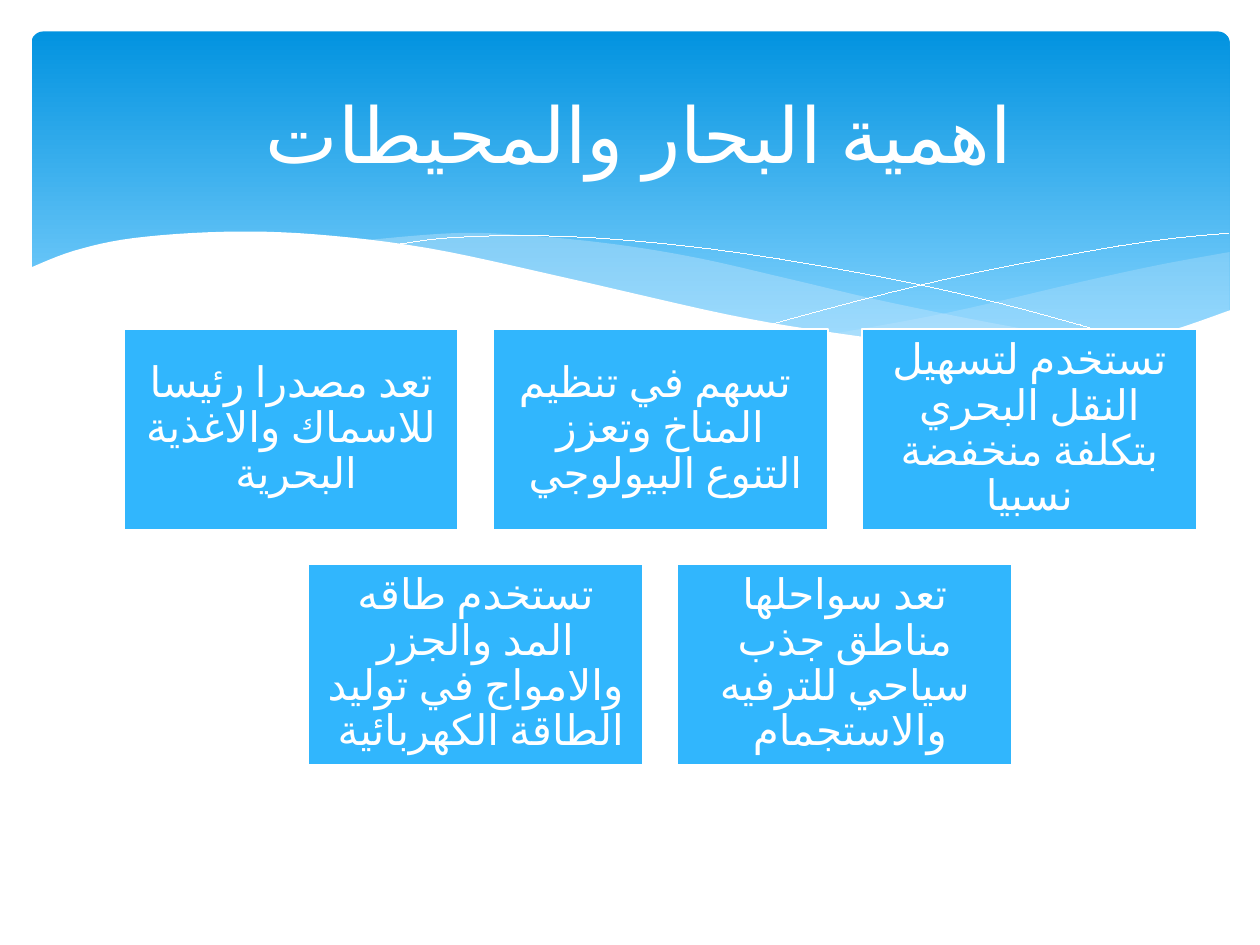
from dataclasses import dataclass

from lxml.etree import SubElement
from pptx import Presentation
from pptx.dml.color import RGBColor
from pptx.enum.shapes import MSO_SHAPE as Shape
from pptx.enum.text import MSO_ANCHOR as Anchor, PP_ALIGN as Align
from pptx.oxml.ns import qn
from pptx.util import Inches, Pt


@dataclass(frozen=True)
class Theme:
    font: str = "Calibri"
    language: str = "ar-SA"
    title_size: int = 44
    card_size: int = 24
    hairline: float = 0.01
    white: str = "FFFFFF"
    card: str = "31B6FD"
    wave: str = "C6E7FC"
    sky_top: str = "0293E0"
    sky_bottom: str = "83D3FE"


@dataclass(frozen=True)
class Box:
    left: float
    top: float
    width: float
    height: float

    def emu(self):
        return [Inches(v) for v in (self.left, self.top, self.width, self.height)]


THEME = Theme()
TITLE = "اهمية البحار والمحيطات "
CARD_ROWS = [
    [
        "تعد مصدرا رئيسا للاسماك والاغذية البحرية ",
        " تسهم في تنظيم المناخ وتعزز التنوع البيولوجي ",
        "تستخدم لتسهيل النقل البحري بتكلفة منخفضة نسبيا",
    ],
    [
        "تستخدم طاقه المد والجزر والامواج في توليد الطاقة الكهربائية ",
        "تعد سواحلها مناطق جذب سياحي للترفيه والاستجمام ",
    ],
]

RIGHT_WAVE = [
    [(9.51, 1.75), (8.96, 1.85), (8.36, 1.98), (7.28, 2.23), (6.36, 2.4)],
    [(6.36, 2.4), (6.94, 2.47), (7.78, 2.53), (8.56, 2.48), (9.1, 2.37), (9.51, 2.22)],
]
MIDDLE_WAVE = [
    [(8.68, 2.48), (7.82, 2.35), (6.81, 2.15), (6.04, 1.97), (5.3, 1.8),
     (4.64, 1.69), (3.95, 1.62), (3.36, 1.6), (2.61, 1.66)],
    [(2.61, 1.66), (3.37, 1.78), (4.24, 1.97), (5.41, 2.23), (6.4, 2.41),
     (7.23, 2.51), (7.93, 2.53), (8.68, 2.48)],
]
FALLING_LINE = [
    [(2.84, 1.7), (3.28, 1.64), (3.91, 1.62), (4.64, 1.65), (5.57, 1.75),
     (6.7, 1.94), (7.7, 2.16), (8.82, 2.47)],
]
RISING_LINE = [
    [(5.88, 2.32), (6.7, 2.1), (7.51, 1.91), (8.41, 1.74), (8.99, 1.65), (9.5, 1.6)],
]
FRONT_WAVE = [
    [(9.52, 2.21), (8.95, 2.4), (8.38, 2.49), (7.84, 2.52), (7.19, 2.49),
     (6.43, 2.4), (5.54, 2.25), (4.22, 1.95), (3.15, 1.72), (2.25, 1.61),
     (1.52, 1.59), (0.81, 1.64), (0.34, 1.74), (-0.02, 1.88)],
    [(-0.02, 3.04), (9.52, 3.04)],
]


def smooth(knots, steps=6):
    padded = [knots[0], *knots, knots[-1]]
    points = [knots[0]]
    for a, b, c, d in zip(padded, padded[1:], padded[2:], padded[3:]):
        for step in range(1, steps + 1):
            t = step / steps
            points.append(tuple(
                0.5 * (2 * q + (r - p) * t + (2 * p - 5 * q + 4 * r - s) * t**2
                       + (3 * q - p - 3 * r + s) * t**3)
                for p, q, r, s in zip(a, b, c, d)
            ))
    return points


def paint(shape, fill=None, line=None, weight=THEME.hairline, opacity=None):
    shape.shadow.inherit = False
    if fill:
        shape.fill.solid()
        shape.fill.fore_color.rgb = RGBColor.from_string(fill)
        if opacity is not None:
            color = shape.element.spPr.find(qn("a:solidFill")).find(qn("a:srgbClr"))
            SubElement(color, qn("a:alpha"), val=str(opacity * 1000))
    else:
        shape.fill.background()
    if line:
        shape.line.color.rgb = RGBColor.from_string(line)
        shape.line.width = Pt(weight)
    else:
        shape.line.fill.background()


def write(shape, text, size, color=THEME.white, inset=0.1, spacing=1.0):
    frame = shape.text_frame
    frame.word_wrap = True
    frame.vertical_anchor = Anchor.MIDDLE
    frame.margin_left = frame.margin_right = Inches(0.1)
    frame.margin_top = frame.margin_bottom = Inches(inset)
    para = frame.paragraphs[0]
    para.alignment = Align.CENTER
    para.line_spacing = spacing
    para._p.get_or_add_pPr().set("rtl", "1")
    span = para.add_run()
    span.text = text
    span.font.name = THEME.font
    span.font.size = Pt(size)
    span.font.color.rgb = RGBColor.from_string(color)
    span.font._element.set("lang", THEME.language)


def add_curve(page, box, edges, closed=True, **style):
    points = [
        (Inches(box.left + x), Inches(box.top + y))
        for edge in edges for x, y in smooth(edge)
    ]
    builder = page.shapes.build_freeform(*points[0])
    builder.add_line_segments(points[1:], close=closed)
    paint(builder.convert_to_shape(), **style)


def add_header(page, box):
    sky = page.shapes.add_shape(Shape.ROUNDED_RECTANGLE, *box.emu())
    sky.adjustments[0] = 0.034
    paint(sky)
    sky.fill.gradient()
    sky.fill.gradient_angle = 270
    stops = zip(sky.fill.gradient_stops, (THEME.sky_top, THEME.sky_bottom), (0, 0.9))
    for stop, color, position in stops:
        stop.color.rgb = RGBColor.from_string(color)
        stop.position = position
    add_curve(page, box, RIGHT_WAVE, fill=THEME.wave, opacity=29)
    add_curve(page, box, MIDDLE_WAVE, fill=THEME.wave, opacity=40)
    for line in (FALLING_LINE, RISING_LINE):
        add_curve(page, box, line, closed=False, line=THEME.white)
    add_curve(page, box, FRONT_WAVE, fill=THEME.white)


def add_title(page, box):
    title = page.shapes.add_textbox(*box.emu())
    write(title, TITLE, THEME.title_size, inset=0.05)


def add_cards(page, box, rows, gap=0.27):
    columns = max(len(row) for row in rows)
    width = (box.width - gap * (columns - 1)) / columns
    height = (box.height - gap * (len(rows) - 1)) / len(rows)
    for index, row in enumerate(rows):
        indent = (columns - len(row)) * (width + gap) / 2
        for column, text in enumerate(row):
            place = Box(box.left + indent + column * (width + gap),
                        box.top + index * (height + gap), width, height)
            card = page.shapes.add_shape(Shape.RECTANGLE, *place.emu())
            paint(card, fill=THEME.card, line=THEME.white, weight=1.25)
            write(card, text, THEME.card_size, spacing=0.9)


def main():
    deck = Presentation()
    deck.slide_width, deck.slide_height = Inches(10), Inches(7.5)
    page = deck.slides.add_slide(deck.slide_layouts[6])
    add_header(page, Box(0.25, 0.25, 9.51, 2.7))
    add_cards(page, Box(0.98, 2.61, 8.52, 3.46), CARD_ROWS)
    add_title(page, Box(0.5, 0.37, 9, 1.37))
    deck.save("out.pptx")


if __name__ == "__main__":
    main()
